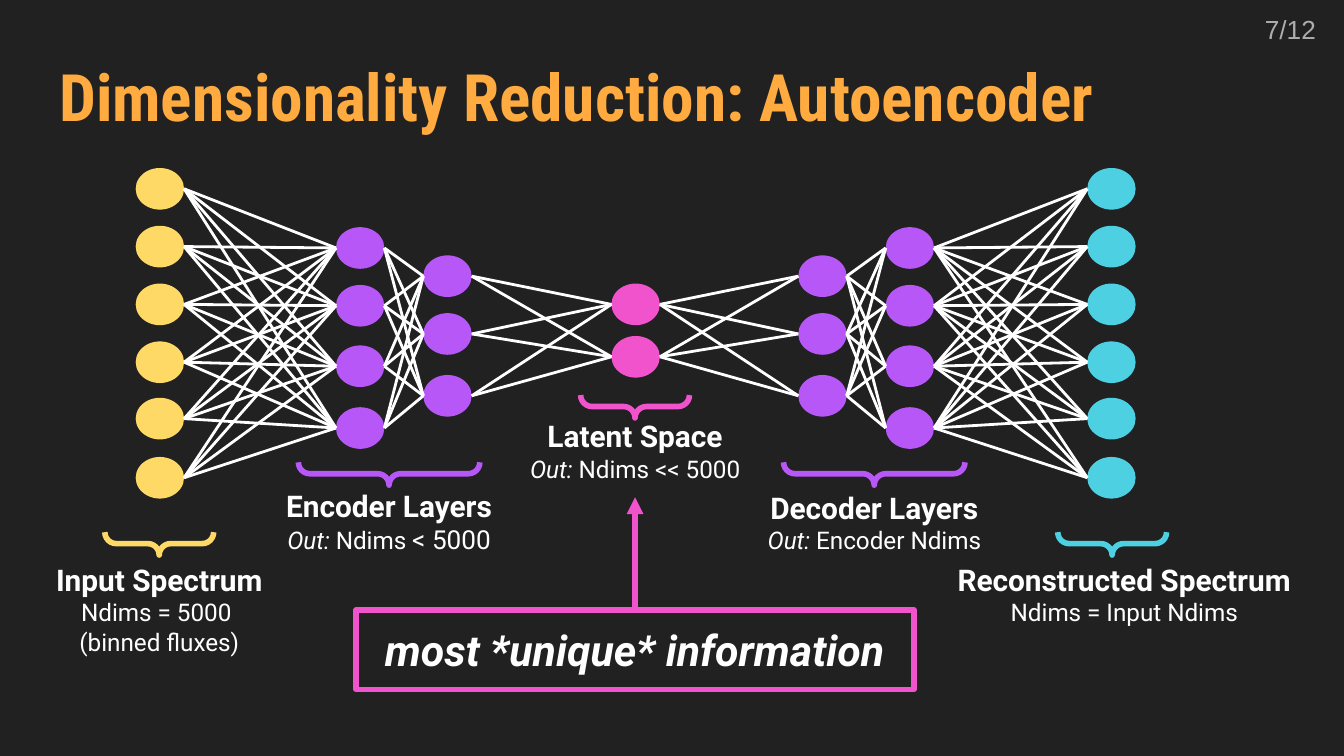
"""Build a slide showing how an autoencoder reduces dimensionality."""
from dataclasses import dataclass
from itertools import pairwise, product

from lxml import etree
from pptx import Presentation
from pptx.dml import color
from pptx.enum import shapes, text
from pptx.oxml import ns
from pptx.shapes import autoshape, connector as connectors
from pptx.slide import Slide
from pptx.util import Inches, Pt


@dataclass(frozen=True)
class Theme:
    background: str = "212121"
    title: str = "FFAB40"
    page: str = "ADADAD"
    white: str = "FFFFFF"
    yellow: str = "FFD966"
    purple: str = "B757F7"
    pink: str = "F153CD"
    cyan: str = "4DD0E1"
    title_size: float = 35
    callout_size: float = 23
    heading_size: float = 16
    page_size: float = 14
    detail_size: float = 13
    thin: float = 1.5
    thick: float = 3


THEME = Theme()
NODE_WIDTH, NODE_HEIGHT = 0.36, 0.31
BRACE_DEPTH = 0.17


@dataclass(frozen=True)
class Box:
    left: float
    top: float
    width: float
    height: float

    def lengths(self) -> tuple[Inches, ...]:
        return tuple(map(Inches, (self.left, self.top, self.width, self.height)))


@dataclass(frozen=True)
class Words:
    text: str
    size: float = THEME.detail_size
    bold: bool = False
    italic: bool = False
    color: str = THEME.white
    font: str = "Roboto"


Lines = tuple[tuple[Words, ...], ...]


@dataclass(frozen=True)
class Layer:
    left: float
    tops: tuple[float, ...]
    color: str


@dataclass(frozen=True)
class Caption:
    box: Box
    heading: str
    details: Lines


@dataclass(frozen=True)
class Brace:
    left: float
    top: float
    span: float
    color: str


INPUT_TOPS = (1.25, 1.68, 2.11, 2.54, 2.96, 3.4)
OUTER_TOPS = (1.69, 2.12, 2.57, 3.03)
INNER_TOPS = (1.9, 2.33, 2.79)
LAYERS = (
    Layer(1.01, INPUT_TOPS, THEME.yellow),
    Layer(2.5, OUTER_TOPS, THEME.purple),
    Layer(3.15, INNER_TOPS, THEME.purple),
    Layer(4.55, (2.11, 2.5), THEME.pink),
    Layer(5.94, INNER_TOPS, THEME.purple),
    Layer(6.59, OUTER_TOPS, THEME.purple),
    Layer(8.09, INPUT_TOPS, THEME.cyan),
)
OUT = Words("Out: ", italic=True)
CAPTIONS = (
    Caption(Box(0.11, 4.08, 2.15, 0.91), "Input Spectrum",
            ((Words("Ndims = 5000 "),), (Words("(binned fluxes)"),))),
    Caption(Box(1.82, 3.53, 2.15, 0.71), "Encoder Layers",
            ((OUT, Words("Ndims "), Words("< 5000", 14)),)),
    Caption(Box(3.65, 3.01, 2.15, 0.69), "Latent Space",
            ((OUT, Words("Ndims << 5000")),)),
    Caption(Box(5.43, 3.54, 2.15, 0.69), "Decoder Layers",
            ((OUT, Words("Encoder Ndims")),)),
    Caption(Box(6.83, 4.08, 3.07, 0.69), "Reconstructed Spectrum",
            ((Words("Ndims = Input Ndims"),),)),
)
BRACES = (
    Brace(1.1, 3.64, 0.81, THEME.yellow),
    Brace(2.81, 2.85, 1.35, THEME.purple),
    Brace(4.64, 2.62, 0.81, THEME.pink),
    Brace(6.42, 2.85, 1.35, THEME.purple),
    Brace(8.19, 3.64, 0.81, THEME.cyan),
)
CALLOUT = Box(2.65, 4.54, 4.15, 0.59)


def rgb(value: str) -> color.RGBColor:
    return color.RGBColor.from_string(value)


def write(shape: autoshape.Shape, lines: Lines, align: text.PP_ALIGN) -> None:
    frame = shape.text_frame
    settings = {"word_wrap": True, "auto_size": text.MSO_AUTO_SIZE.NONE,
                "vertical_anchor": text.MSO_ANCHOR.TOP}
    settings |= {f"margin_{side}": Inches(0.1) for side in ("left", "top", "right", "bottom")}
    for name, value in settings.items():
        setattr(frame, name, value)
    for index, line in enumerate(lines):
        paragraph = frame.add_paragraph() if index else frame.paragraphs[0]
        paragraph.alignment = align
        for words in line:
            run = paragraph.add_run()
            run.text = words.text
            formats = {"name": words.font, "size": Pt(words.size),
                       "bold": words.bold, "italic": words.italic}
            for name, value in formats.items():
                setattr(run.font, name, value)
            run.font.color.rgb = rgb(words.color)


def add_outline(slide: Slide, kind: shapes.MSO_SHAPE, box: Box, line: str) -> autoshape.Shape:
    shape = slide.shapes.add_shape(kind, *box.lengths())
    shape.shadow.inherit = False
    shape.fill.background()
    shape.line.color.rgb = rgb(line)
    shape.line.width = Pt(THEME.thick)
    return shape


def add_line(slide: Slide, start: tuple[float, float], end: tuple[float, float],
             line: str, width: float) -> connectors.Connector:
    connector = slide.shapes.add_connector(
        shapes.MSO_CONNECTOR.STRAIGHT, *map(Inches, (*start, *end)))
    connector.line.color.rgb = rgb(line)
    connector.line.width = Pt(width)
    etree.SubElement(connector._element.spPr, ns.qn("a:effectLst"))
    return connector


def add_layer(slide: Slide, layer: Layer) -> None:
    for top in layer.tops:
        box = Box(layer.left, top, NODE_WIDTH, NODE_HEIGHT)
        node = slide.shapes.add_shape(shapes.MSO_SHAPE.OVAL, *box.lengths())
        node.shadow.inherit = False
        node.fill.solid()
        node.fill.fore_color.rgb = rgb(layer.color)
        node.line.fill.background()


def connect_layers(slide: Slide, first: Layer, second: Layer) -> None:
    for start, end in product(first.tops, second.tops):
        add_line(slide, (first.left + NODE_WIDTH, start + NODE_HEIGHT / 2),
                 (second.left, end + NODE_HEIGHT / 2), THEME.white, THEME.thin)


def add_caption(slide: Slide, caption: Caption) -> None:
    heading = Words(caption.heading, THEME.heading_size, bold=True)
    shape = slide.shapes.add_textbox(*caption.box.lengths())
    write(shape, ((heading,), *caption.details), text.PP_ALIGN.CENTER)


def add_brace(slide: Slide, brace: Brace) -> None:
    box = Box(brace.left, brace.top, BRACE_DEPTH, brace.span)
    shape = add_outline(slide, shapes.MSO_SHAPE.LEFT_BRACE, box, brace.color)
    shape.rotation = 270
    shape.adjustments[0] = shape.adjustments[1] = 0.5


def add_callout(slide: Slide) -> None:
    box = add_outline(slide, shapes.MSO_SHAPE.RECTANGLE, CALLOUT, THEME.pink)
    message = Words("most *unique* information", THEME.callout_size, bold=True, italic=True)
    write(box, ((message,),), text.PP_ALIGN.CENTER)
    center = CALLOUT.left + CALLOUT.width / 2
    arrow = add_line(slide, (center, CALLOUT.top), (center, 3.7), THEME.pink, THEME.thick)
    arrow.begin_connect(box, 0)
    etree.SubElement(arrow.line._get_or_add_ln(), ns.qn("a:tailEnd"), type="triangle")


def add_header(slide: Slide) -> None:
    title = slide.shapes.title
    title.left, title.top, title.width, title.height = Box(0.34, 0.32, 9.32, 0.63).lengths()
    heading = Words("Dimensionality Reduction: Autoencoder", THEME.title_size, bold=True,
                    color=THEME.title, font="Roboto Condensed")
    write(title, ((heading,),), text.PP_ALIGN.LEFT)
    page = slide.shapes.add_textbox(*Box(9.29, 0.1, 0.6, 0.43).lengths())
    number = Words("7/12", THEME.page_size, color=THEME.page, font="Arial")
    write(page, ((number,),), text.PP_ALIGN.RIGHT)
    page.text_frame.margin_top = 0


def main() -> None:
    presentation = Presentation()
    width = Inches(10)
    presentation.slide_width, presentation.slide_height = width, width * 9 // 16
    slide = presentation.slides.add_slide(presentation.slide_layouts.get_by_name("Title Only"))
    slide.background.fill.solid()
    slide.background.fill.fore_color.rgb = rgb(THEME.background)
    add_header(slide)
    for caption in CAPTIONS:
        add_caption(slide, caption)
    add_callout(slide)
    for layer in LAYERS:
        add_layer(slide, layer)
    for first, second in pairwise(LAYERS):
        connect_layers(slide, first, second)
    for brace in BRACES:
        add_brace(slide, brace)
    presentation.save("out.pptx")


if __name__ == "__main__":
    main()
